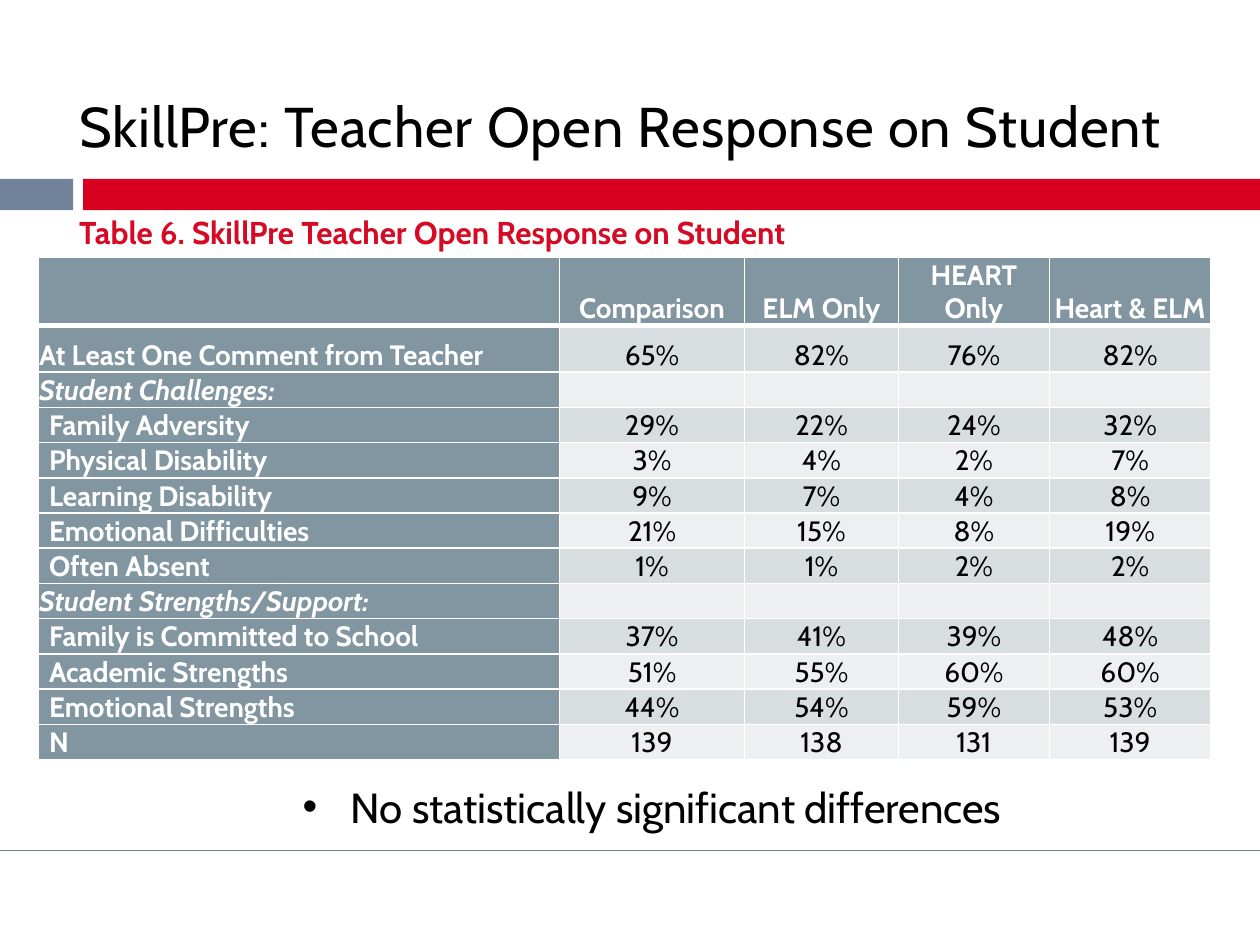
"""Build the slide with the table of teacher comments on students."""
import pptx
import pptx.dml.color
import pptx.enum.shapes
import pptx.enum.text
import pptx.oxml
import pptx.oxml.ns
import pptx.util

WIDE, HIGH = pptx.util.Inches(10), pptx.util.Inches(7.5)
ALIGN = pptx.enum.text.PP_ALIGN
ANCHOR = pptx.enum.text.MSO_ANCHOR
SLATE, RED, HEAD = "71839A", "D80021", "8296A1"
BANDS = ("D8DDE0", "EDEFF0")
INSET = pptx.util.Inches(0.01)
DEEP = pptx.util.Inches(0.09)
COLS = (41.4, 14.7, 12.2, 12, 12.8)
TALL = (7.2, 4.93) + (3.73,) * 11
ROWS = (
    ("", "Comparison", "ELM Only", "HEART Only", "Heart & ELM"),
    ("At Least One Comment from Teacher", "65%", "82%", "76%", "82%"),
    ("Student Challenges:", "", "", "", ""),
    ("Family Adversity", "29%", "22%", "24%", "32%"),
    ("Physical Disability", "3%", "4%", "2%", "7%"),
    ("Learning Disability", "9%", "7%", "4%", "8%"),
    ("Emotional Difficulties", "21%", "15%", "8%", "19%"),
    ("Often Absent", "1%", "1%", "2%", "2%"),
    ("Student Strengths/Support:", "", "", "", ""),
    ("Family is Committed to School", "37%", "41%", "39%", "48%"),
    ("Academic Strengths", "51%", "55%", "60%", "60%"),
    ("Emotional Strengths", "44%", "54%", "59%", "53%"),
    ("N", "139", "138", "131", "139"),
)


def across(share):
    """Turn a percentage of the slide's width into a length."""
    return round(WIDE * share / 100)


def down(share):
    """Turn a percentage of the slide's height into a length."""
    return round(HIGH * share / 100)


def place(x, y, w, h):
    """Turn four percentages into left, top, width and height."""
    return across(x), down(y), across(w), down(h)


def shade(code):
    """Return the colour for a hex string."""
    return pptx.dml.color.RGBColor.from_string(code)


def apply(thing, values):
    """Set each named value on an object."""
    for name, value in values.items():
        setattr(thing, name, value)


def child(parent, xml):
    """Append an element of the drawing namespace."""
    space = pptx.oxml.ns.nsdecls("a")
    node = pptx.oxml.parse_xml(xml.replace("NS", space, 1))
    parent.append(node)
    return node


def write(para, text, size, code, **style):
    """Add a run of styled text to a paragraph."""
    run = para.add_run()
    run.text = text
    apply(run.font, {"name": "Cabin", "size": pptx.util.Pt(size), **style})
    run.font.color.rgb = shade(code)
    return run


def label(slide, area, anchor=ANCHOR.TOP):
    """Add a wrapping text box and return its first paragraph."""
    frame = slide.shapes.add_textbox(*place(*area)).text_frame
    apply(frame, {"word_wrap": True, "vertical_anchor": anchor})
    return frame.paragraphs[0]


def bar(slide, area, code):
    """Add a plain filled rectangle."""
    kind = pptx.enum.shapes.MSO_SHAPE.RECTANGLE
    shape = slide.shapes.add_shape(kind, *place(*area))
    shape.shadow.inherit = False
    shape.fill.solid()
    shape.fill.fore_color.rgb = shade(code)
    shape.line.fill.background()


def rule(slide, y, code):
    """Add a thin line across the whole slide."""
    kind = pptx.enum.shapes.MSO_CONNECTOR.STRAIGHT
    line = slide.shapes.add_connector(kind, 0, down(y), WIDE, down(y))
    line.line.width = pptx.util.Pt(1)
    line.line.color.rgb = shade(code)
    child(line._element.spPr, "<a:effectLst NS/>")


def edge(cell, row):
    """Draw white cell borders, thick below the header row."""
    thick = {"T": 3 if row == 1 else 1, "B": 3 if row == 0 else 1}
    for side in "LRTB":
        width = pptx.util.Pt(thick.get(side, 1))
        child(cell._tc.get_or_add_tcPr(),
              f'<a:ln{side} NS w="{width}"><a:solidFill>'
              f'<a:srgbClr val="FFFFFF"/></a:solidFill></a:ln{side}>')


def fill(cell, text, row, col):
    """Style one table cell and write its text."""
    head = row == 0 or col == 0
    group = text.endswith(":")
    nested = col == 0 and row > 1 and not group
    edge(cell, row)
    cell.fill.solid()
    cell.fill.fore_color.rgb = shade(HEAD if head else BANDS[(row - 1) % 2])
    apply(cell, {"vertical_anchor": ANCHOR.BOTTOM,
                 "margin_left": DEEP if nested else INSET,
                 "margin_top": INSET, "margin_right": INSET,
                 "margin_bottom": 0})
    para = cell.text_frame.paragraphs[0]
    para.alignment = ALIGN.CENTER if col else ALIGN.LEFT
    if text:
        write(para, text, 16, "FFFFFF" if head else "000000",
              bold=head, italic=group)
    else:
        child(para._p, '<a:endParaRPr NS sz="1600">'
                       '<a:latin typeface="Cabin"/></a:endParaRPr>')


def grid(slide, x, y):
    """Add the table of shares by group."""
    area = place(x, y, sum(COLS), sum(TALL))
    table = slide.shapes.add_table(len(ROWS), len(COLS), *area).table
    apply(table, {"first_row": False, "horz_banding": False})
    for col, share in enumerate(COLS):
        table.columns[col].width = across(share)
    for row, texts in enumerate(ROWS):
        table.rows[row].height = down(TALL[row])
        for col, text in enumerate(texts):
            fill(table.cell(row, col), text, row, col)


def note(slide, area, text):
    """Add a centred remark with a bullet."""
    para = label(slide, area)
    para.alignment = ALIGN.CENTER
    props = para._p.get_or_add_pPr()
    dent = pptx.util.Inches(0.38)
    props.set("marL", str(dent))
    props.set("indent", str(-dent))
    child(props, '<a:buFont NS typeface="Arial"/>')
    child(props, '<a:buChar NS char="•"/>')
    write(para, text, 24, "000000")


def main():
    """Build and save the slide."""
    deck = pptx.Presentation()
    apply(deck, {"slide_width": WIDE, "slide_height": HIGH})
    slide = deck.slides.add_slide(deck.slide_layouts[6])
    bar(slide, (0, 18.93, 5.8, 3.33), SLATE)
    bar(slide, (6.6, 18.93, 93.4, 3.33), RED)
    rule(slide, 90, "718399")
    title = write(label(slide, (5.3, 5.47, 88.3, 12), ANCHOR.BOTTOM),
                  "SkillPre: Teacher Open Response on Student", 32, "000000")
    title.font._element.set("spc", "50")
    write(label(slide, (5.3, 21.87, 88.3, 10.67)),
          "Table 6. SkillPre Teacher Open Response on Student",
          18, "D50B26", bold=True)
    grid(slide, 3, 27.2)
    note(slide, (7.4, 82, 88.7, 6.67), "No statistically significant differences")
    deck.save("out.pptx")


if __name__ == "__main__":
    main()
